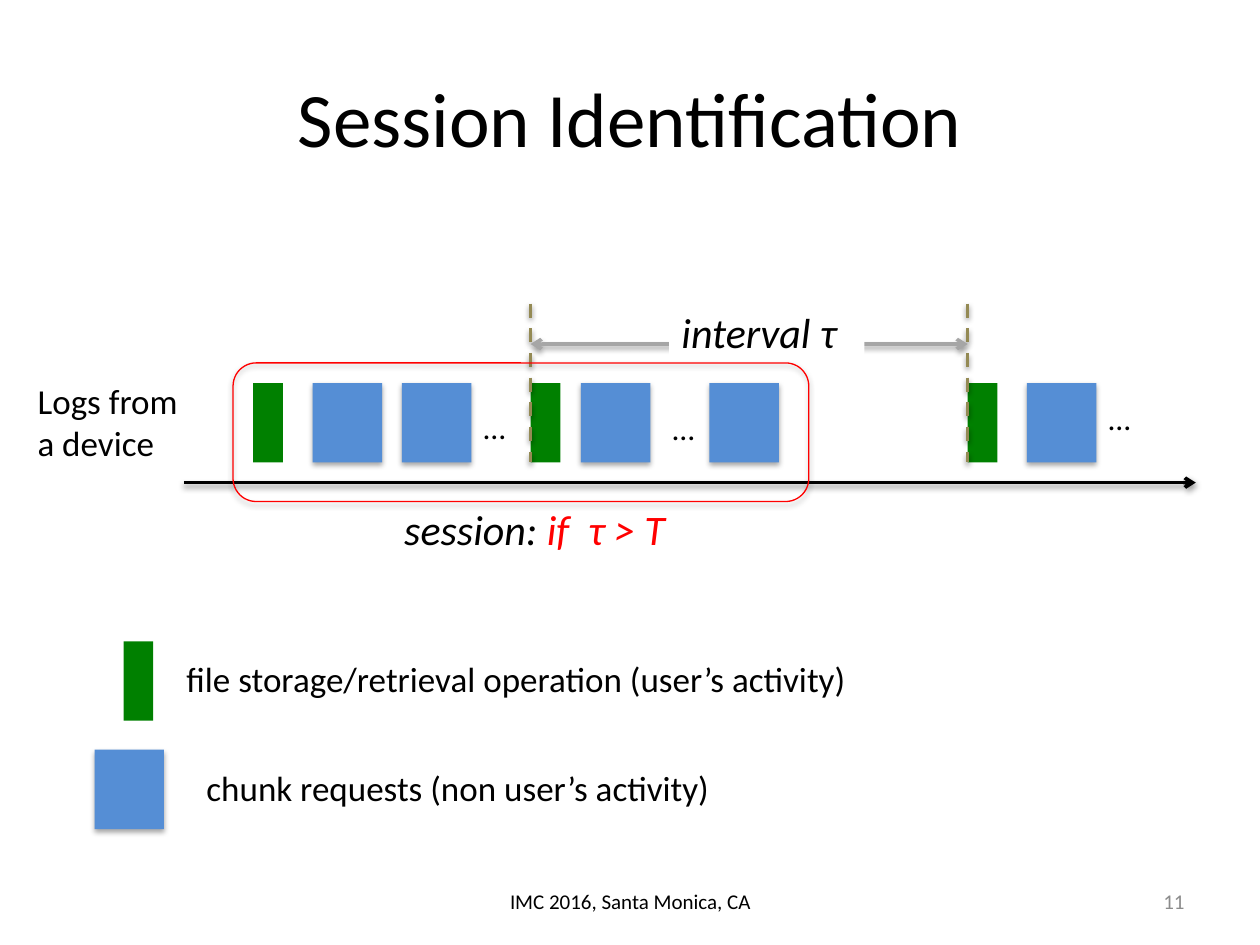
"""Build the Session Identification slide: a device log timeline with its legend."""
from lxml.etree import SubElement
from pptx import Presentation
from pptx.dml.color import RGBColor
from pptx.enum.dml import MSO_LINE
from pptx.enum.shapes import MSO_CONNECTOR, MSO_SHAPE
from pptx.enum.text import MSO_ANCHOR, PP_ALIGN
from pptx.oxml.ns import qn
from pptx.util import Pt

BLACK = RGBColor(0x00, 0x00, 0x00)
WHITE = RGBColor(0xFF, 0xFF, 0xFF)
RED = RGBColor(0xFF, 0x00, 0x00)
GREEN = RGBColor(0x00, 0x80, 0x00)
BLUE = RGBColor(0x55, 0x8E, 0xD5)
TAN = RGBColor(0x94, 0x8A, 0x54)
SILVER = RGBColor(0xA6, 0xA6, 0xA6)
GRAY = RGBColor(0x8C, 0x8C, 0x8C)

OPERATION_WIDTH, CHUNK_WIDTH, BLOCK_HEIGHT = 17, 39.7, 45.4
BLOCK_TOP = 218.9
INTERVAL_START, INTERVAL_END = 303.2, 553


def write_text(shape, text, size=20, color=BLACK, italic=False,
               align=PP_ALIGN.LEFT, anchor=MSO_ANCHOR.TOP):
    frame = shape.text_frame
    frame.word_wrap = True
    frame.vertical_anchor = anchor
    paragraph = frame.paragraphs[0]
    paragraph.alignment = align
    run = paragraph.add_run()
    run.text = text
    run.font.name = "Calibri"
    run.font.size = Pt(size)
    run.font.italic = italic
    run.font.color.rgb = color


def add_shadow(shape, opacity=35, distance=1.8):
    effects = shape._element.spPr.get_or_add_effectLst() if hasattr(
        shape._element.spPr, "get_or_add_effectLst") else SubElement(
        shape._element.spPr, qn("a:effectLst"))
    shadow = SubElement(effects, qn("a:outerShdw"), blurRad=str(Pt(3.1)),
                        dist=str(Pt(distance)), dir="5400000", rotWithShape="0")
    color = SubElement(shadow, qn("a:srgbClr"), val=str(BLACK))
    SubElement(color, qn("a:alpha"), val=str(opacity * 1000))


presentation = Presentation()
presentation.slide_width, presentation.slide_height = Pt(720), Pt(540)
slide = presentation.slides.add_slide(presentation.slide_layouts[5])
shapes = slide.shapes

title = shapes.title
title.left, title.top, title.width, title.height = Pt(36), Pt(21.6), Pt(648), Pt(90)
write_text(title, "Session Identification", size=44,
           align=PP_ALIGN.CENTER, anchor=MSO_ANCHOR.MIDDLE)

blocks = [(left, BLOCK_TOP, OPERATION_WIDTH, GREEN)
          for left in (144.7, INTERVAL_START, INTERVAL_END)]
blocks += [(left, BLOCK_TOP, CHUNK_WIDTH, BLUE)
           for left in (178.6, 229.7, 331.9, 405.4, 586.8)]
blocks += [(70.6, 366.5, OPERATION_WIDTH, GREEN), (54, 428.4, CHUNK_WIDTH, BLUE)]
for left, top, width, color in blocks:
    block = shapes.add_shape(MSO_SHAPE.RECTANGLE, Pt(left), Pt(top),
                             Pt(width), Pt(BLOCK_HEIGHT))
    block.shadow.inherit = False
    block.fill.solid()
    block.fill.fore_color.rgb = color
    block.line.fill.background()
    if color == BLUE:
        add_shadow(block)

lines = [
    (105.1, 275.8, 683.3, 275.8, BLACK, None, ["tailEnd"]),
    (INTERVAL_START, 173.5, INTERVAL_START, 264.3, TAN, MSO_LINE.DASH, []),
    (INTERVAL_END, 173.5, INTERVAL_END, 264.3, TAN, MSO_LINE.DASH, []),
    (INTERVAL_START, 196.6, INTERVAL_END, 196.6, SILVER, None, ["headEnd", "tailEnd"]),
]
for x1, y1, x2, y2, color, dash, arrowheads in lines:
    line = shapes.add_connector(MSO_CONNECTOR.STRAIGHT, Pt(x1), Pt(y1), Pt(x2), Pt(y2))
    line.line.color.rgb = color
    line.line.width = Pt(2)
    if dash:
        line.line.dash_style = dash
    for end in arrowheads:
        SubElement(line.line._get_or_add_ln(), qn(f"a:{end}"), type="arrow")
    add_shadow(line, opacity=38, distance=1.6)

interval_label = shapes.add_textbox(Pt(382.3), Pt(171.4), Pt(111.6), Pt(36))
interval_label.fill.solid()
interval_label.fill.fore_color.rgb = WHITE
write_text(interval_label, "interval τ", size=24, italic=True)

session_frame = shapes.add_shape(MSO_SHAPE.ROUNDED_RECTANGLE, Pt(133.2), Pt(207.4),
                                 Pt(329), Pt(79.2))
session_frame.shadow.inherit = False
session_frame.fill.background()
session_frame.line.color.rgb = RED
session_frame.line.width = Pt(0.75)
add_shadow(session_frame)

session_label = shapes.add_textbox(Pt(223.9), Pt(284.4), Pt(172.1), Pt(36))
write_text(session_label, "session: ", size=24, italic=True)
write_text(session_label, "if  τ > T", size=24, italic=True, color=RED)

footer = {"size": 12, "anchor": MSO_ANCHOR.MIDDLE}
labels = [
    ("…", 269.3, 229.7, 27.4, 28.8, {"size": 18}),
    ("…", 377.3, 230.4, 27.4, 28.8, {"size": 18}),
    ("…", 626.4, 224.6, 27.4, 28.8, {"size": 18}),
    ("Logs from a device", 14.4, 213.1, 96.5, 55.4, {}),
    ("file storage/retrieval operation (user’s activity)", 99.4, 372.2, 396.7, 31.7, {}),
    ("chunk requests (non user’s activity)", 110.9, 434.2, 305.3, 31.7, {}),
    ("IMC 2016, Santa Monica, CA", 246.2, 500.4, 228.2, 28.8,
     {**footer, "align": PP_ALIGN.CENTER}),
    ("11", 516.2, 500.4, 167.8, 28.8,
     {**footer, "align": PP_ALIGN.RIGHT, "color": GRAY}),
]
for text, left, top, width, height, style in labels:
    label = shapes.add_textbox(Pt(left), Pt(top), Pt(width), Pt(height))
    write_text(label, text, **style)

presentation.save("out.pptx")
